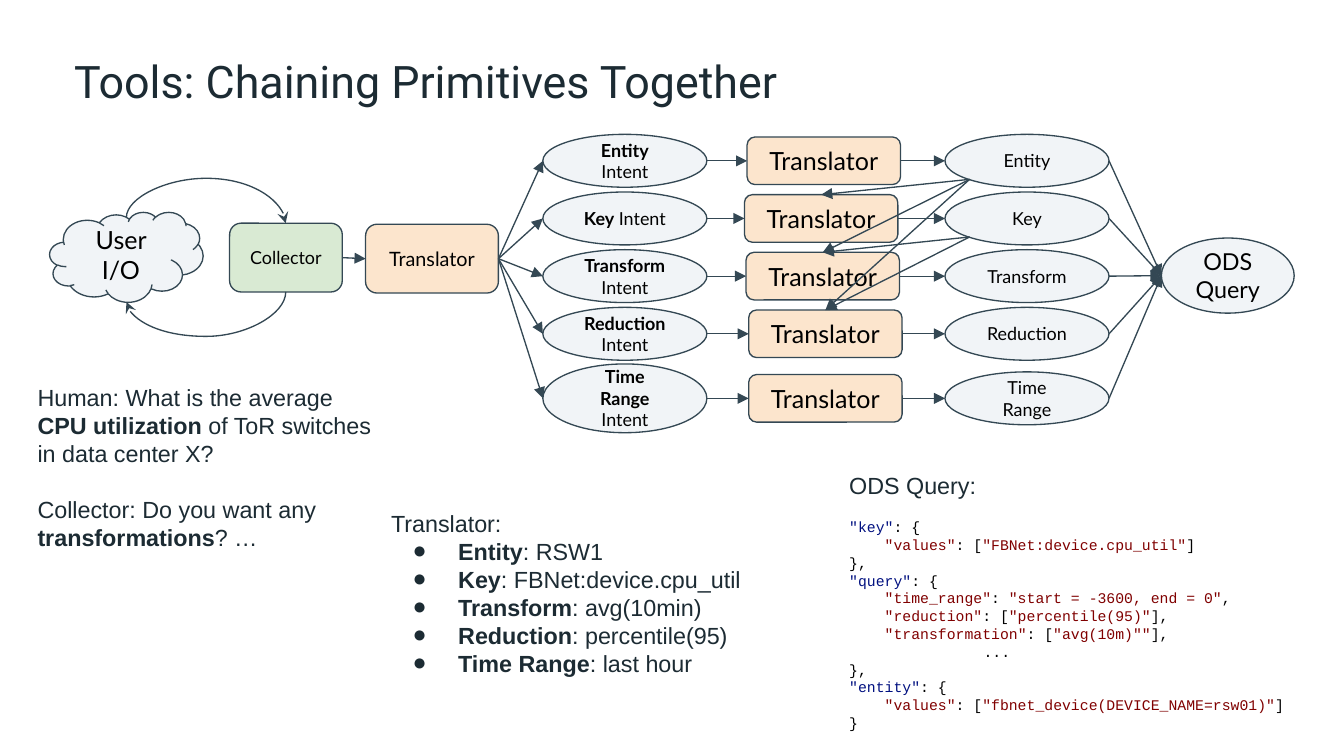
"""Build the slide on chaining primitives together."""
from lxml import etree
from pptx import Presentation
from pptx import util as u
from pptx.dml.color import RGBColor
from pptx.enum import shapes as s, text as t
from pptx.oxml import ns

HUES = {"ink": "1C2B33", "line": "344854", "pale": "F1F4F7", "green": "D9EAD3",
        "peach": "FCE5CD", "black": "000000", "key": "001080", "value": "800000"}

TITLE = "Tools: Chaining Primitives Together"
ROWS = [
    # name, centre, intent height, left of translator
    ("Entity", 3.04, 1, 14.12),
    ("Key", 4.13, 1, 14.07),
    ("Transform", 5.22, 1, 14.1),
    ("Reduction", 6.31, 1, 14.15),
    ("Time Range", 7.53, 1.3, 14.15),
][:]
FEEDS = [(0, 1), (0, 2), (1, 2), (1, 3), (0, 3)]
TALK = [
    [("Human: What is the average ", ""), ("CPU utilization", "bold"),
     (" of ToR switches in data center X?", "")],
    [("Collector: Do you want any ", ""), ("transformations", "bold"), ("? …", "")],
]
FACTS = [("Entity", "RSW1"), ("Key", "FBNet:device.cpu_util"),
         ("Transform", "avg(10min)"), ("Reduction", "percentile(95)"),
         ("Time Range", "last hour")]
CODE = [
    [('"key"', "key"), (": {", "")],
    [('    "values"', "value"), (": [", ""), ('"FBNet:device.cpu_util"', "value"), ("]", "")],
    [("},", "")],
    [('"query"', "key"), (": {", "")],
    [('    "time_range"', "value"), (": ", ""),
     ('"start = -3600, end = 0"', "value"), (",", "")],
    [('    "reduction"', "value"), (": [", ""), ('"percentile(95)"', "value"), ("],", "")],
    [('    "transformation"', "value"), (": [", ""), ('"avg(10m)""', "value"), ("],", "")],
    [("\t...", "")],
    [("},", "")],
    [('"entity"', "key"), (": {", "")],
    [('    "values"', "value"), (": [", ""),
     ('"fbnet_device(DEVICE_NAME=rsw01)"', "value"), ("]", "")],
    [("}", "")],
]

KIND = s.MSO_SHAPE
OVAL, ROUND = KIND.FLOWCHART_CONNECTOR, KIND.ROUNDED_RECTANGLE
WIDE, HIGH = 3.1, 0.9
LEFT, RIGHT = 10.26, 17.86
BOX = 2.9

deck = Presentation()
deck.slide_width, deck.slide_height = u.Cm(25.4), u.Cm(14.29)
slide = deck.slides.add_slide(deck.slide_layouts[1])
tree = slide.shapes


def rgb(name):
    return RGBColor.from_string(HUES[name])


def sub(node, tag, **attrs):
    return etree.SubElement(node, ns.qn(tag), attrs)


def write(para, runs, font, size, hue):
    for words, style in runs:
        run = para.add_run()
        run.text = words
        run.font.name, run.font.size = font, u.Pt(size)
        run.font.bold = style == "bold"
        run.font.color.rgb = rgb(style if style in HUES else hue)


def place(item, x, y, w, h):
    item.left, item.top, item.width, item.height = map(u.Cm, (x, y, w, h))


def frame(item, pad, anchor):
    body = item.text_frame
    body.word_wrap = True
    body.auto_size = t.MSO_AUTO_SIZE.NONE
    body.vertical_anchor = anchor
    body.margin_left = body.margin_right = u.Cm(pad)
    body.margin_top = body.margin_bottom = u.Cm(pad)
    return body


def fill(body, lines, font, size, hue, pitch, gap=0):
    for runs in lines:
        fresh = not body.paragraphs[0].runs
        para = body.paragraphs[0] if fresh else body.add_paragraph()
        para.line_spacing = u.Pt(pitch)
        para.space_before = u.Pt(0 if fresh else gap)
        if runs[0][0].startswith("\t"):
            tabs = sub(para._p.get_or_add_pPr(), "a:tabLst")
            sub(tabs, "a:tab", pos=str(u.Cm(2.54)), algn="l")
        write(para, runs, font, size, hue)


def node(kind, x, mid, w, h, hue, size, runs):
    item = tree.add_shape(kind, *map(u.Cm, (x, mid - h / 2, w, h)))
    item.shadow.inherit = False
    item.fill.solid()
    item.fill.fore_color.rgb = rgb(hue)
    item.line.color.rgb = rgb("line")
    item.line.width = u.Pt(0.72)
    para = frame(item, 0.25, t.MSO_ANCHOR.MIDDLE).paragraphs[0]
    para.alignment = t.PP_ALIGN.CENTER
    write(para, runs, "Lato", size, "black")


def link(x, y, to_x, to_y, kind=s.MSO_CONNECTOR.STRAIGHT, tip="triangle"):
    item = tree.add_connector(kind, *map(u.Cm, (x, y, to_x, to_y)))
    item.line.color.rgb = rgb("line")
    item.line.width = u.Pt(0.72)
    sub(item.line._get_or_add_ln(), "a:tailEnd", type=tip)
    sub(item._element.spPr, "a:effectLst")
    return item


def bend(x, y, to_x, to_y, rise, turn, flip):
    span, drop = abs(to_x - x), to_y - y
    mid_x, mid_y = (x + to_x) / 2, (y + to_y) / 2
    ends = [mid_x - drop / 2, mid_x + drop / 2]
    if flip:
        ends.reverse()
    item = link(ends[0], mid_y - span / 2, ends[1], mid_y + span / 2,
                s.MSO_CONNECTOR.CURVE, "stealth")
    props = item._element.spPr
    props.find(ns.qn("a:xfrm")).set("rot", str(turn * 60000))
    geom = props.find(ns.qn("a:prstGeom"))
    guides = geom.find(ns.qn("a:avLst"))
    if guides is None:
        guides = sub(geom, "a:avLst")
    sub(guides, "a:gd", name="adj1", fmla=f"val {round(rise / drop * 100000)}")


def head():
    place(tree.title, 1.4, 0.86, 20.52, 1.17)
    para = frame(tree.title, 0, t.MSO_ANCHOR.MIDDLE).paragraphs[0]
    para.alignment = t.PP_ALIGN.LEFT
    para.line_spacing = 1.15
    write(para, [(TITLE, "")], "Roboto", 24, "ink")


def graph():
    node(ROUND, 4.34, 4.87, 2.13, 1.3, "green", 9.6, [("Collector", "")])
    node(KIND.CLOUD, 0.94, 4.86, 2.9, 1.7, "pale", 13.4, [("User I/O", "")])
    node(ROUND, 6.91, 4.89, 2.51, 1.3, "peach", 10.6, [("Translator", "")])
    node(OVAL, 21.95, 5.21, 2.51, 1.42, "pale", 12.5, [("ODS Query", "")])
    for name, mid, tall, x in ROWS:
        node(OVAL, LEFT, mid, WIDE, tall, "pale", 9.6, [(name, "bold"), (" Intent", "")])
        node(ROUND, x, mid, BOX, HIGH, "peach", 13.4, [("Translator", "")])
        node(OVAL, RIGHT, mid, WIDE, 1, "pale", 9.6, [(name, "")])
    link(6.47, 4.87, 6.91, 4.89)
    for name, mid, tall, x in ROWS:
        link(9.42, 4.89, LEFT, mid)
        link(LEFT + WIDE, mid, x, mid)
        link(x + BOX, mid, RIGHT, mid)
        link(RIGHT + WIDE, mid, 21.95, 5.21)
    for start, end in FEEDS:
        link(RIGHT + 0.15 * WIDE, ROWS[start][1] + 0.35,
             ROWS[end][3] + BOX / 2, ROWS[end][1] - HIGH / 2)
    bend(2.39, 4.11, 5.4, 4.22, -0.74, 270, True)
    bend(5.4, 5.52, 2.39, 5.71, 0.84, 90, False)


def notes():
    top = t.MSO_ANCHOR.TOP
    talk = tree.add_textbox(*map(u.Cm, (0.46, 6.99, 6.88, 3.71)))
    fill(frame(talk, 0.25, top), TALK, "Arial", 12.5, "ink", 15, 15)

    facts = slide.placeholders[1]
    place(facts, 7.14, 9.37, 7.72, 3.71)
    body = frame(facts, 0.25, top)
    lines = [[(name, "bold"), (": " + value, "")] for name, value in FACTS]
    fill(body, [[("Translator:", "")]] + lines, "Arial", 12.5, "ink", 15)
    for spot, para in enumerate(body.paragraphs):
        props = para._p.get_or_add_pPr()
        props.set("marL", str(u.Cm(1.27) if spot else 0))
        props.set("indent", str(u.Cm(-0.86) if spot else 0))
        if spot:
            sub(sub(props, "a:buClr"), "a:srgbClr", val=HUES["ink"])
            sub(props, "a:buFont", typeface="Arial")
            sub(props, "a:buChar", char="●")
        else:
            sub(props, "a:buNone")

    code = tree.add_textbox(*map(u.Cm, (15.9, 8.76, 9.5, 5.23)))
    body = frame(code, 0.15, top)
    fill(body, [[("ODS Query:", "")]], "Arial", 12.5, "ink", 15)
    fill(body, CODE, "Courier New", 7.9, "black", 9.54)
    body.paragraphs[1].space_before = u.Pt(10)


if __name__ == "__main__":
    head()
    graph()
    notes()
    deck.save("out.pptx")
